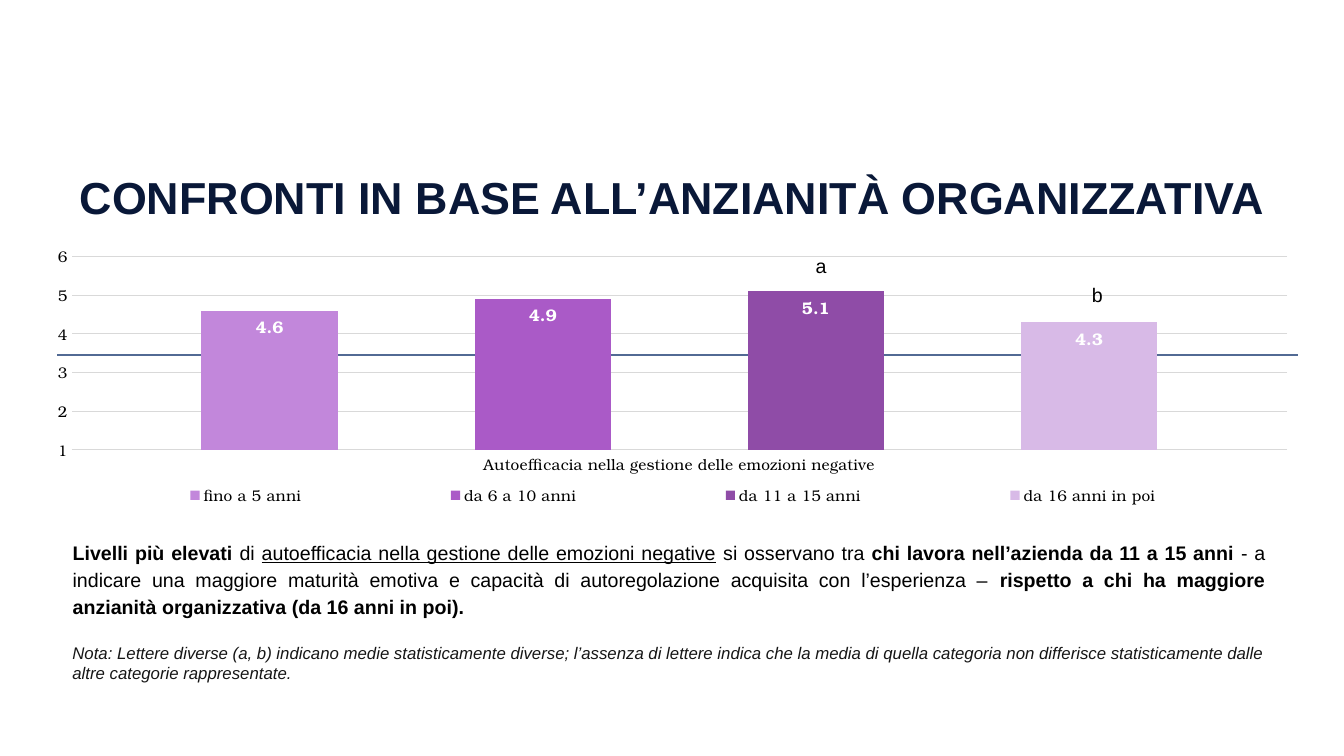
from dataclasses import dataclass

from lxml import etree
from pptx import Presentation
from pptx.chart.chart import Chart
from pptx.chart.data import CategoryChartData
from pptx.dml.color import RGBColor
from pptx.enum.chart import XL_CHART_TYPE, XL_LABEL_POSITION, XL_LEGEND_POSITION, XL_TICK_MARK
from pptx.enum.shapes import MSO_CONNECTOR
from pptx.enum.text import MSO_ANCHOR, MSO_AUTO_SIZE, PP_ALIGN
from pptx.oxml.ns import qn
from pptx.shapes.base import BaseShape
from pptx.slide import Slide
from pptx.text.text import Font
from pptx.util import Emu, Pt

COLUMNS = XL_CHART_TYPE.COLUMN_CLUSTERED
INSIDE_END = XL_LABEL_POSITION.INSIDE_END
LEGEND_BOTTOM = XL_LEGEND_POSITION.BOTTOM
NO_TICKS = XL_TICK_MARK.NONE
STRAIGHT = MSO_CONNECTOR.STRAIGHT
TOP, MIDDLE = MSO_ANCHOR.TOP, MSO_ANCHOR.MIDDLE
NO_AUTOFIT = MSO_AUTO_SIZE.NONE
LEFT, CENTER, JUSTIFY = PP_ALIGN.LEFT, PP_ALIGN.CENTER, PP_ALIGN.JUSTIFY

EMU_PER_PX = 9144  # 100 px to the inch


@dataclass(frozen=True)
class Theme:
    text_font: str = "Arial"
    chart_font: str = "TeX Gyre Bonum"
    title: str = "091838"
    text: str = "000000"
    note: str = "161616"
    label: str = "FFFFFF"
    grid: str = "D9D9D9"
    midpoint: str = "526A94"
    title_size: int = 32
    body_size: int = 14
    note_size: int = 12
    axis_size: int = 11
    label_size: int = 12


@dataclass(frozen=True)
class Box:
    left: int
    top: int
    width: int
    height: int


@dataclass(frozen=True)
class Seniority:
    name: str
    mean: float
    color: str


@dataclass(frozen=True)
class Letter:
    text: str
    box: Box


@dataclass(frozen=True)
class Passage:
    text: str
    bold: bool = False
    underline: bool = False


THEME = Theme()
TITLE = "CONFRONTI IN BASE ALL’ANZIANITÀ ORGANIZZATIVA"
SCALE_NAME = "Autoefficacia nella gestione delle emozioni negative"
GROUPS = [
    Seniority("fino a 5 anni", 4.6, "C287DB"),
    Seniority("da 6 a 10 anni", 4.9, "AA5AC7"),
    Seniority("da 11 a 15 anni", 5.1, "8F4CA7"),
    Seniority("da 16 anni in poi", 4.3, "D8BAE7"),
]
LETTERS = [Letter("a", Box(799, 247, 58, 34)), Letter("b", Box(1073, 276, 58, 34))]
PASSAGES = [
    Passage("Livelli più elevati ", bold=True),
    Passage("di "),
    Passage("autoefficacia nella gestione delle emozioni negative", underline=True),
    Passage(" si osservano tra "),
    Passage("chi lavora nell’azienda da 11 a 15 anni", bold=True),
    Passage(" - a indicare una maggiore maturità emotiva e capacità di autoregolazione "
            "acquisita con l’esperienza – "),
    Passage("rispetto a chi ha maggiore anzianità organizzativa (da 16 anni in poi).", bold=True),
]
NOTE = ("Nota: Lettere diverse (a, b) indicano medie statisticamente diverse; l’assenza di lettere "
        "indica che la media di quella categoria non differisce statisticamente dalle altre "
        "categorie rappresentate.")


def px(value: int) -> Emu:
    return Emu(value * EMU_PER_PX)


def place(shape: BaseShape, box: Box) -> None:
    shape.left, shape.top = px(box.left), px(box.top)
    shape.width, shape.height = px(box.width), px(box.height)


def style_font(font: Font, name: str, size: int, color: str, bold: bool = False) -> None:
    font.name, font.size, font.bold = name, Pt(size), bold
    font.color.rgb = RGBColor.from_string(color)


def prepare_frame(shape: BaseShape, anchor: MSO_ANCHOR, inset: int = 10) -> None:
    frame = shape.text_frame
    frame.word_wrap, frame.auto_size, frame.vertical_anchor = True, NO_AUTOFIT, anchor
    frame.margin_left = frame.margin_right = px(inset)
    frame.margin_top = frame.margin_bottom = px(inset)


def add_title(slide: Slide) -> None:
    title = slide.shapes.title
    place(title, Box(68, 160, 1198, 78))
    prepare_frame(title, MIDDLE)
    title.text_frame.text = TITLE
    paragraph = title.text_frame.paragraphs[0]
    paragraph.alignment, paragraph.line_spacing = CENTER, 0.85
    style_font(paragraph.runs[0].font, THEME.text_font, THEME.title_size, THEME.title, bold=True)


def add_body(slide: Slide) -> None:
    body = slide.placeholders[1]
    place(body, Box(45, 523, 1220, 103))
    prepare_frame(body, TOP)
    paragraph = body.text_frame.paragraphs[0]
    properties = paragraph._p.get_or_add_pPr()
    properties.set("marL", str(px(17)))
    properties.set("indent", "0")
    etree.SubElement(properties, qn("a:buNone"))
    paragraph.alignment, paragraph.line_spacing = JUSTIFY, 1.15
    paragraph.space_before = Pt(0)
    for passage in PASSAGES:
        run = paragraph.add_run()
        run.text = passage.text
        style_font(run.font, THEME.text_font, THEME.body_size, THEME.text, passage.bold)
        run.font.underline = passage.underline


def add_text(slide: Slide, text: str, box: Box, size: int, color: str, italic: bool = False) -> None:
    shape = slide.shapes.add_textbox(0, 0, 0, 0)
    place(shape, box)
    prepare_frame(shape, TOP, inset=5)
    shape.text_frame.margin_left = shape.text_frame.margin_right = px(10)
    shape.text_frame.text = text
    paragraph = shape.text_frame.paragraphs[0]
    paragraph.alignment = LEFT
    style_font(paragraph.runs[0].font, THEME.text_font, size, color)
    paragraph.runs[0].font.italic = italic


def add_midpoint_line(slide: Slide) -> None:
    line = slide.shapes.add_connector(STRAIGHT, px(57), px(352), px(1287), px(352))
    line.line.color.rgb = RGBColor.from_string(THEME.midpoint)
    line.line.width = Pt(1.75)
    etree.SubElement(line._element.spPr, qn("a:effectLst"))


def set_layout(parent: etree._Element, index: int, inner: bool, **fractions: float) -> None:
    """Fix a chart part at fractions of the chart's size."""
    for old in parent.findall(qn("c:layout")):
        parent.remove(old)
    layout = etree.Element(qn("c:layout"))
    manual = etree.SubElement(layout, qn("c:manualLayout"))
    if inner:
        etree.SubElement(manual, qn("c:layoutTarget")).set("val", "inner")
    for mode in ("xMode", "yMode"):
        etree.SubElement(manual, qn(f"c:{mode}")).set("val", "edge")
    for name, value in fractions.items():
        etree.SubElement(manual, qn(f"c:{name}")).set("val", str(value))
    parent.insert(index, layout)


def format_axes(chart: Chart) -> None:
    for axis in (chart.category_axis, chart.value_axis):
        axis.major_tick_mark = axis.minor_tick_mark = NO_TICKS
        style_font(axis.tick_labels.font, THEME.chart_font, THEME.axis_size, THEME.text)
    values = chart.value_axis
    values.minimum_scale, values.maximum_scale, values.major_unit = 1, 6, 1
    values.format.line.fill.background()
    for line in (chart.category_axis.format.line, values.major_gridlines.format.line):
        line.color.rgb = RGBColor.from_string(THEME.grid)
        line.width = Pt(0.75)


def add_chart(slide: Slide) -> None:
    data = CategoryChartData(number_format="#,##0.0")
    data.categories = [SCALE_NAME]
    for group in GROUPS:
        data.add_series(group.name, [group.mean])
    frame = slide.shapes.add_chart(COLUMNS, px(33), px(238), px(1269), px(274), data)
    chart = frame.chart
    chart.has_title = False
    style_font(chart.font, THEME.chart_font, THEME.axis_size, THEME.text)
    format_axes(chart)
    chart.value_axis.tick_labels.number_format = "0"
    chart.value_axis.tick_labels.number_format_is_linked = False

    # Columns and their values
    plot = chart.plots[0]
    plot.gap_width, plot.overlap, plot.vary_by_categories = 190, -100, False
    for series, group in zip(plot.series, GROUPS):
        series.format.fill.solid()
        series.format.fill.fore_color.rgb = RGBColor.from_string(group.color)
        labels = series.data_labels
        labels.show_value, labels.position = True, INSIDE_END
        labels.number_format, labels.number_format_is_linked = "#,##0.0", False
        style_font(labels.font, THEME.chart_font, THEME.label_size, THEME.label, bold=True)

    # Legend, plot position and clear background
    chart.has_legend = True
    legend = chart.legend
    legend.position, legend.include_in_layout = LEGEND_BOTTOM, False
    style_font(legend.font, THEME.chart_font, THEME.axis_size, THEME.text)
    set_layout(legend._element, 1, False, x=0.01, y=0.87, w=0.98, h=0.11)
    chart_part = chart._chartSpace.find(qn("c:chart"))
    set_layout(chart_part.find(qn("c:plotArea")), 0, True, x=0.03, y=0.06, w=0.95, h=0.7)
    background = etree.Element(qn("c:spPr"))
    etree.SubElement(background, qn("a:noFill"))
    etree.SubElement(etree.SubElement(background, qn("a:ln")), qn("a:noFill"))
    chart_part.addnext(background)


def main() -> None:
    presentation = Presentation()
    presentation.slide_width, presentation.slide_height = px(1333), px(750)
    slide = presentation.slides.add_slide(presentation.slide_layouts[1])
    add_midpoint_line(slide)
    add_title(slide)
    add_chart(slide)
    for letter in LETTERS:
        add_text(slide, letter.text, letter.box, THEME.body_size, THEME.text)
    add_body(slide)
    add_text(slide, NOTE, Box(62, 633, 1223, 50), THEME.note_size, THEME.note, italic=True)
    presentation.save("out.pptx")


if __name__ == "__main__":
    main()
